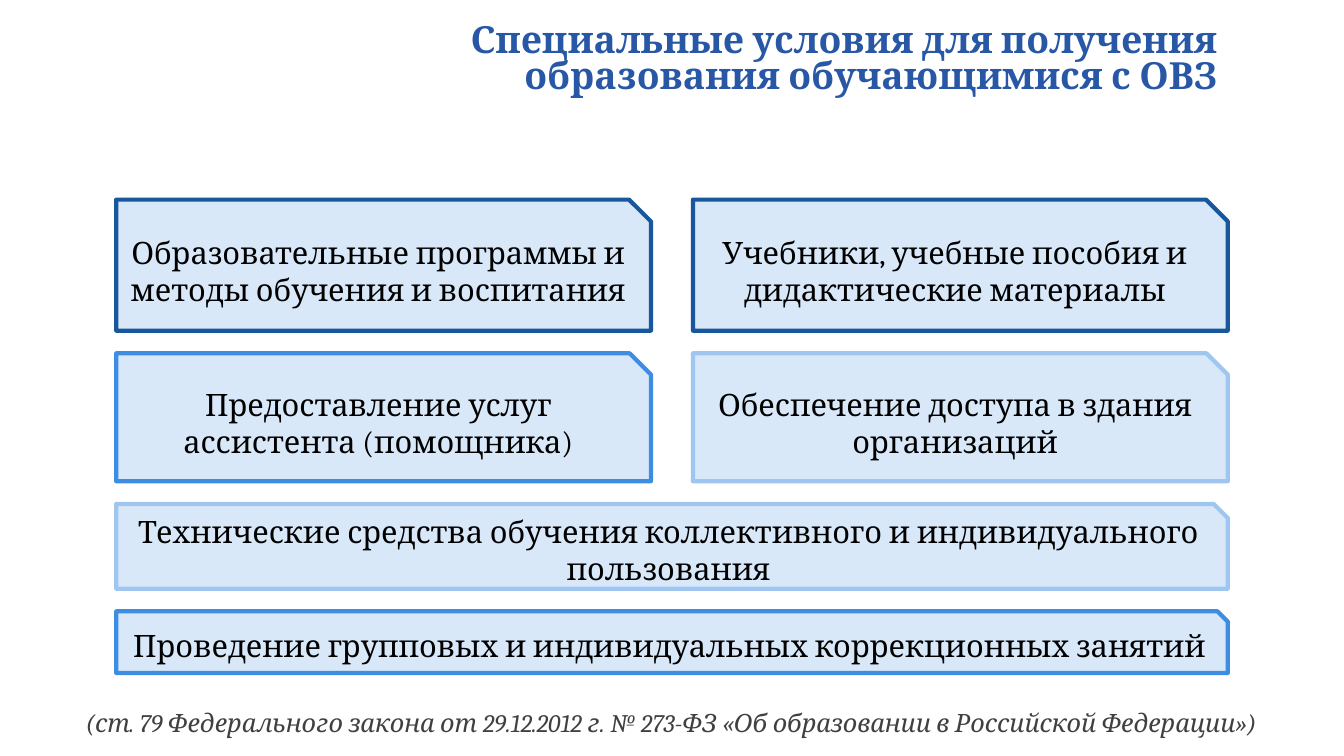
from dataclasses import dataclass

import pptx
import pptx.dml.color
import pptx.enum.shapes
import pptx.enum.text
import pptx.util
from pptx.enum.text import PP_ALIGN
from pptx.slide import Slide
from pptx.text.text import TextFrame


@dataclass(frozen=True)
class Theme:
    font: str = "Cambria"
    title: str = "2857A5"
    body: str = "000000"
    note: str = "404040"
    fill: str = "D9E8F9"
    dark: str = "18579B"
    medium: str = "3F8DE2"
    light: str = "9FC6F0"
    title_size: float = 26.7
    body_size: float = 22
    note_size: float = 18
    outline: float = 3


THEME = Theme()
LEFT, TOP = 83, 142.6
FULL_WIDTH = 794
COLUMN_GAP, ROW_GAP = 30, 16.2


@dataclass(frozen=True)
class Card:
    text: str
    outline: str


@dataclass(frozen=True)
class Row:
    height: float
    cards: tuple[Card, ...]


ROWS = (
    Row(93.6, (
        Card("Образовательные программы и методы обучения и воспитания", THEME.dark),
        Card("Учебники, учебные пособия и дидактические материалы", THEME.dark),
    )),
    Row(91.4, (
        Card("Предоставление услуг ассистента (помощника)", THEME.medium),
        Card("Обеспечение доступа в здания организаций", THEME.light),
    )),
    Row(60.5, (
        Card("Технические средства обучения коллективного и индивидуального пользования",
             THEME.light),
    )),
    Row(44, (
        Card("Проведение групповых и индивидуальных коррекционных занятий", THEME.medium),
    )),
)


def color(value: str) -> pptx.dml.color.RGBColor:
    return pptx.dml.color.RGBColor.from_string(value)


def box(*lengths: float) -> list[pptx.util.Length]:
    return [pptx.util.Pt(length) for length in lengths]


def write(frame: TextFrame, text: str, size: float, ink: str, alignment: PP_ALIGN,
          bold: bool = False, italic: bool = False, spacing: float = 1.0) -> None:
    frame.word_wrap = True
    frame.vertical_anchor = pptx.enum.text.MSO_ANCHOR.MIDDLE
    paragraph = frame.paragraphs[0]
    paragraph.text = text
    paragraph.alignment = alignment
    paragraph.line_spacing = spacing
    paragraph.font.name = THEME.font
    paragraph.font.size = pptx.util.Pt(size)
    paragraph.font.bold = bold
    paragraph.font.italic = italic
    paragraph.font.color.rgb = color(ink)


def draw_card(slide: Slide, card: Card, left: float, top: float,
              width: float, height: float) -> None:
    shape = slide.shapes.add_shape(
        pptx.enum.shapes.MSO_SHAPE.SNIP_1_RECTANGLE, *box(left, top, width, height))
    shape.shadow.inherit = False
    shape.fill.solid()
    shape.fill.fore_color.rgb = color(THEME.fill)
    shape.line.color.rgb = color(card.outline)
    shape.line.width = pptx.util.Pt(THEME.outline)
    write(shape.text_frame, card.text, THEME.body_size, THEME.body, PP_ALIGN.CENTER)


def draw_rows(slide: Slide) -> None:
    top = TOP
    for row in ROWS:
        count = len(row.cards)
        width = (FULL_WIDTH - COLUMN_GAP * (count - 1)) / count
        for column, card in enumerate(row.cards):
            left = LEFT + column * (width + COLUMN_GAP)
            draw_card(slide, card, left, top, width, row.height)
        top += row.height + ROW_GAP


def main() -> None:
    presentation = pptx.Presentation()
    presentation.slide_width, presentation.slide_height = box(960, 540)
    slide = presentation.slides.add_slide(presentation.slide_layouts[6])
    title = slide.shapes.add_textbox(*box(251.3, 13, 625.7, 60.5))
    write(title.text_frame, "Специальные условия для получения образования обучающимися с ОВЗ",
          THEME.title_size, THEME.title, PP_ALIGN.RIGHT, bold=True, spacing=0.8)
    draw_rows(slide)
    note = slide.shapes.add_textbox(*box(15, 504, 929, 24.5))
    write(note.text_frame,
          "(ст. 79 Федерального закона от 29.12.2012 г. № 273-ФЗ "
          "«Об образовании в Российской Федерации»)",
          THEME.note_size, THEME.note, PP_ALIGN.CENTER, italic=True)
    presentation.save("out.pptx")


if __name__ == "__main__":
    main()
